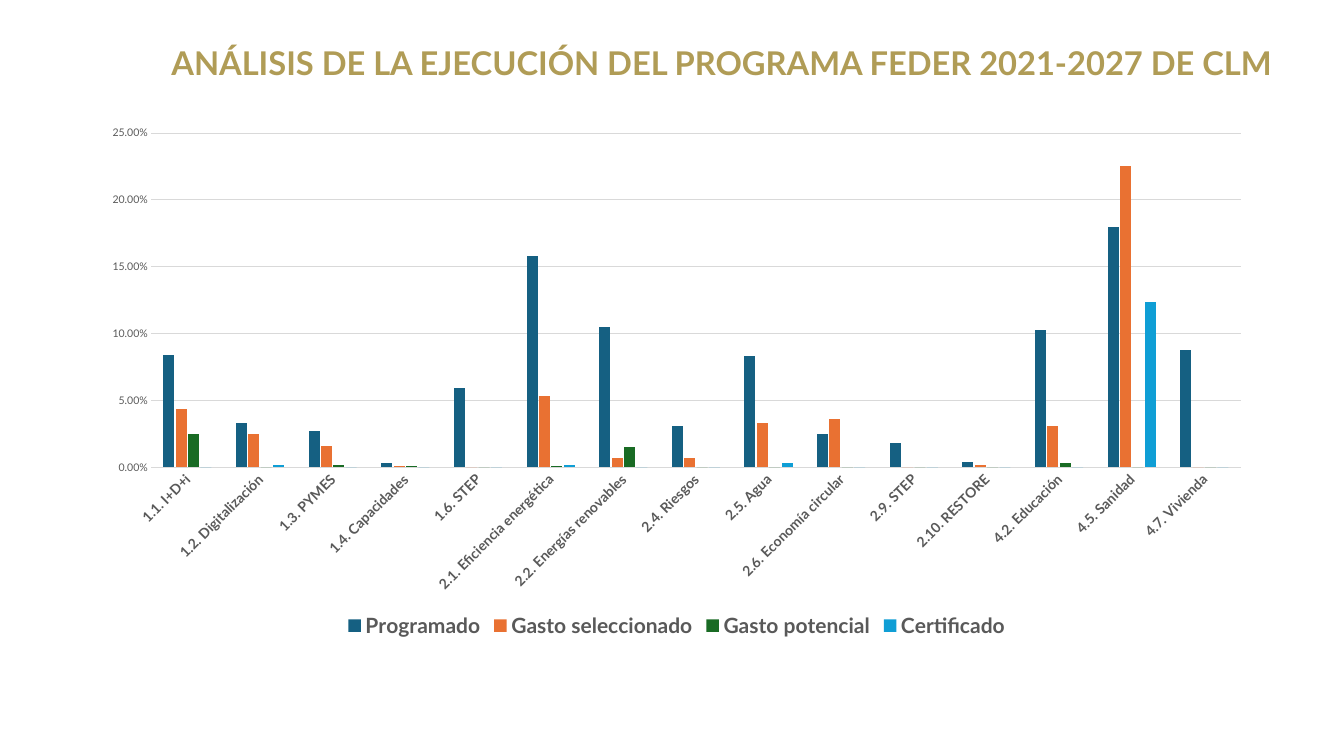
from dataclasses import dataclass

from pptx import Presentation
from pptx.chart.data import CategoryChartData
from pptx.dml.color import RGBColor
from pptx.enum.chart import XL_CHART_TYPE, XL_LEGEND_POSITION, XL_TICK_MARK
from pptx.enum.text import MSO_ANCHOR, MSO_AUTO_SIZE, PP_ALIGN
from pptx.util import Inches, Pt

CLUSTERED = XL_CHART_TYPE.COLUMN_CLUSTERED
LEGEND_BOTTOM = XL_LEGEND_POSITION.BOTTOM
NO_TICK = XL_TICK_MARK.NONE
TOP = MSO_ANCHOR.TOP
NO_AUTOFIT = MSO_AUTO_SIZE.NONE
LEFT = PP_ALIGN.LEFT


@dataclass(frozen=True)
class Theme:
    font: str = "Lato"
    gold: str = "B09C56"
    label: str = "595959"
    rule: str = "D9D9D9"
    black: str = "000000"
    title_size: int = 28
    legend_size: int = 18
    category_size: int = 12
    chart_size: int = 10
    value_size: int = 9


THEME = Theme()

HEADING = "ANÁLISIS DE LA EJECUCIÓN DEL PROGRAMA FEDER 2021-2027 DE CLM"

OBJECTIVES = [
    "1.1. I+D+i", "1.2. Digitalización", "1.3. PYMES", "1.4. Capacidades",
    "1.6. STEP", "2.1. Eficiencia energética", "2.2. Energías renovables",
    "2.4. Riesgos", "2.5. Agua", "2.6. Economía circular", "2.9. STEP",
    "2.10. RESTORE", "4.2. Educación", "4.5. Sanidad", "4.7. Vivienda",
]

# Stage of spending, bar colour, share for each objective
STAGES = [
    ("Programado", "156082",
     [0.084, 0.033, 0.027, 0.003, 0.059, 0.158, 0.105, 0.031,
      0.083, 0.025, 0.018, 0.004, 0.103, 0.18, 0.088]),
    ("Gasto seleccionado", "E97132",
     [0.044, 0.025, 0.016, 0.001, 0, 0.053, 0.007, 0.007,
      0.033, 0.036, 0, 0.002, 0.031, 0.225, 0]),
    ("Gasto potencial", "196B24",
     [0.025, 0, 0.002, 0.001, 0, 0.001, 0.015, 0,
      0, 0, 0, 0, 0.003, 0, 0]),
    ("Certificado", "0F9ED5",
     [0, 0.002, 0, 0, 0, 0.002, 0, 0,
      0.003, 0, 0, 0, 0, 0.124, 0]),
]


def style_font(font, size, color, bold=False):
    font.name = THEME.font
    font.size = Pt(size)
    font.bold = bold
    font.color.rgb = RGBColor.from_string(color)


def style_line(line):
    line.color.rgb = RGBColor.from_string(THEME.rule)
    line.width = Pt(0.75)


def add_heading(slide, left, top, width, height):
    heading = slide.shapes.title
    heading.left, heading.top = left, top
    heading.width, heading.height = width, height
    frame = heading.text_frame
    frame.margin_left = frame.margin_right = 0
    frame.margin_top = frame.margin_bottom = 0
    frame.word_wrap = False
    frame.auto_size = NO_AUTOFIT
    frame.vertical_anchor = TOP
    paragraph = frame.paragraphs[0]
    paragraph.alignment = LEFT
    paragraph.line_spacing = Pt(53.5)
    run = paragraph.add_run()
    run.text = HEADING
    style_font(run.font, THEME.title_size, THEME.gold, bold=True)


def style_axes(chart):
    objectives = chart.category_axis
    objectives.major_tick_mark = objectives.minor_tick_mark = NO_TICK
    style_line(objectives.format.line)
    style_font(objectives.tick_labels.font, THEME.category_size,
               THEME.label, bold=True)
    # Labels slope upwards at 45 degrees, in 60000ths of a degree
    objectives._element.txPr.bodyPr.set("rot", str(-45 * 60000))

    shares = chart.value_axis
    shares.minimum_scale, shares.maximum_scale = 0, 0.25
    shares.major_unit = 0.05
    shares.major_tick_mark = shares.minor_tick_mark = NO_TICK
    shares.format.line.fill.background()
    shares.has_major_gridlines = True
    style_line(shares.major_gridlines.format.line)
    shares.tick_labels.number_format = "0.00%"
    shares.tick_labels.number_format_is_linked = False
    style_font(shares.tick_labels.font, THEME.value_size, THEME.label)


def add_execution_chart(slide, left, top, width, height):
    shares = CategoryChartData(number_format="0.00%")
    shares.categories = OBJECTIVES
    for stage, _, values in STAGES:
        shares.add_series(stage, values)
    chart = slide.shapes.add_chart(
        CLUSTERED, left, top, width, height, shares).chart
    chart.has_title = False
    style_font(chart.font, THEME.chart_size, THEME.black)

    plot = chart.plots[0]
    plot.gap_width = 225
    plot.overlap = -13
    plot.vary_by_categories = False
    for series, (_, color, _) in zip(plot.series, STAGES):
        series.invert_if_negative = False
        series.format.fill.solid()
        series.format.fill.fore_color.rgb = RGBColor.from_string(color)

    style_axes(chart)
    chart.has_legend = True
    chart.legend.position = LEGEND_BOTTOM
    chart.legend.include_in_layout = False
    style_font(chart.legend.font, THEME.legend_size, THEME.label, bold=True)


def main():
    deck = Presentation()
    deck.slide_width, deck.slide_height = Inches(16), Inches(9)
    slide = deck.slides.add_slide(deck.slide_layouts.get_by_name("Title Only"))
    add_execution_chart(slide, Inches(1.06), Inches(1.38),
                        Inches(13.99), Inches(6.27))
    add_heading(slide, Inches(2.04), Inches(0.23), Inches(13.9), Inches(0.74))
    deck.save("out.pptx")


if __name__ == "__main__":
    main()
